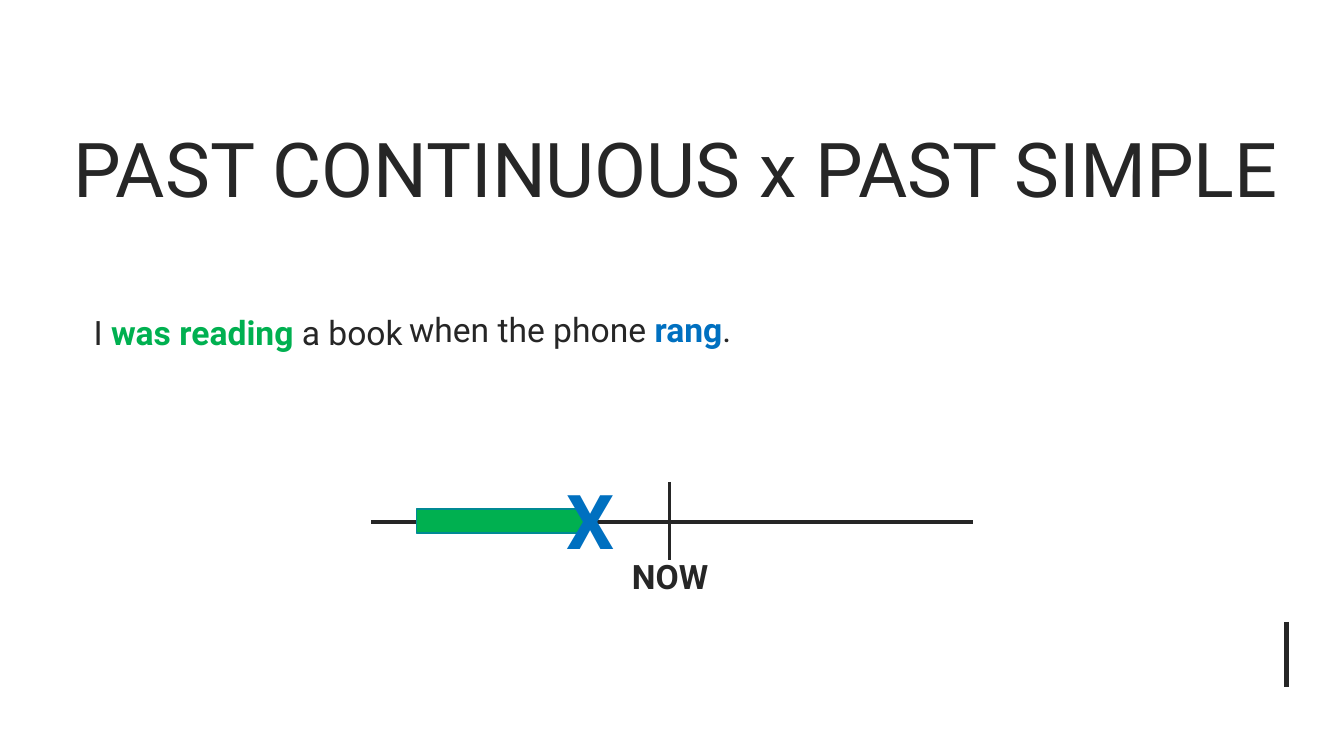
from pptx import Presentation
from pptx import util as u
from pptx.dml.color import RGBColor
from pptx.enum import shapes, text
from pptx.oxml.ns import qn
from lxml import etree

COLORS = {"ink": "262626", "continuous": "00B050", "simple": "0070C0",
          "bar_edge": "008A94", "paper": "FFFFFF"}
FONT = "Roboto"


def rgb(name):
    return RGBColor.from_string(COLORS[name])


def add_text(s, box, runs, size=24, anchor=text.MSO_ANCHOR.TOP, spacing=1.0):
    """Add one paragraph of (words, colour, bold) runs."""
    tf = s.shapes.add_textbox(*map(u.Inches, box)).text_frame
    tf.word_wrap = True
    tf.vertical_anchor = anchor
    p = tf.paragraphs[0]
    p.line_spacing = spacing
    for words, color, bold in runs:
        r = p.add_run()
        r.text = words
        formats = {"name": FONT, "size": u.Pt(size), "bold": bold}
        for key, value in formats.items():
            setattr(r.font, key, value)
        r.font.color.rgb = rgb(color)


def add_line(s, start, end, width=2.75):
    line = s.shapes.add_connector(shapes.MSO_CONNECTOR.STRAIGHT,
                                  *map(u.Inches, (*start, *end)))
    line.line.color.rgb = rgb("ink")
    line.line.width = u.Pt(width)
    etree.SubElement(line._element.spPr, qn("a:effectLst"))


def draw_title(s, box):
    add_text(s, box, [("PAST CONTINUOUS x PAST SIMPLE", "ink", False)],
             size=54, anchor=text.MSO_ANCHOR.MIDDLE)


def draw_sentence(s, box):
    """Set the two clauses side by side."""
    x, y, w, h = box
    split = 3.13
    add_text(s, (x, y, split + 0.2, h),
             [("I ", "ink", False), ("was reading ", "continuous", True),
              ("a book", "ink", False)], spacing=1.1)
    add_text(s, (x + split, y + 0.01, w - split, h),
             [("when the phone ", "ink", False), ("rang", "simple", True),
              (".", "ink", False)])


def draw_timeline(s, box):
    """Draw the time axis, the long action and the event at its end."""
    x, y, w, h = box
    axis_y, now_x = y + 0.4, x + 2.96
    add_line(s, (x, axis_y), (x + w, axis_y))
    add_line(s, (now_x, y), (now_x, y + h))
    add_text(s, (now_x - 0.47, y + 0.69, 1.03, 0.5), [("NOW", "ink", True)])

    bar_x, bar_w, bar_h = x + 0.45, 1.68, 0.24
    bar = s.shapes.add_shape(
        shapes.MSO_SHAPE.RECTANGLE,
        *map(u.Inches, (bar_x, axis_y - 0.13, bar_w, bar_h)))
    bar.shadow.inherit = False
    bar.fill.solid()
    bar.fill.fore_color.rgb = rgb("continuous")
    bar.line.color.rgb = rgb("bar_edge")
    bar.line.width = u.Pt(1)
    add_text(s, (bar_x + bar_w - 0.29, y - 0.13, 0.47, 1.01),
             [("X", "simple", True)], size=54)


def build_slide(prs):
    s = prs.slides.add_slide(prs.slide_layouts[6])
    s.background.fill.solid()
    s.background.fill.fore_color.rgb = rgb("paper")
    add_line(s, (12.76, 6.17), (12.76, 6.82), width=3)
    draw_title(s, (0.63, 0.8, 12.26, 1.71))
    draw_sentence(s, (0.83, 3.01, 7.57, 0.5))
    draw_timeline(s, (3.68, 4.78, 5.97, 0.78))


def main():
    prs = Presentation()
    prs.slide_width, prs.slide_height = u.Inches(13.33), u.Inches(7.5)
    build_slide(prs)
    prs.save("out.pptx")


if __name__ == "__main__":
    main()
